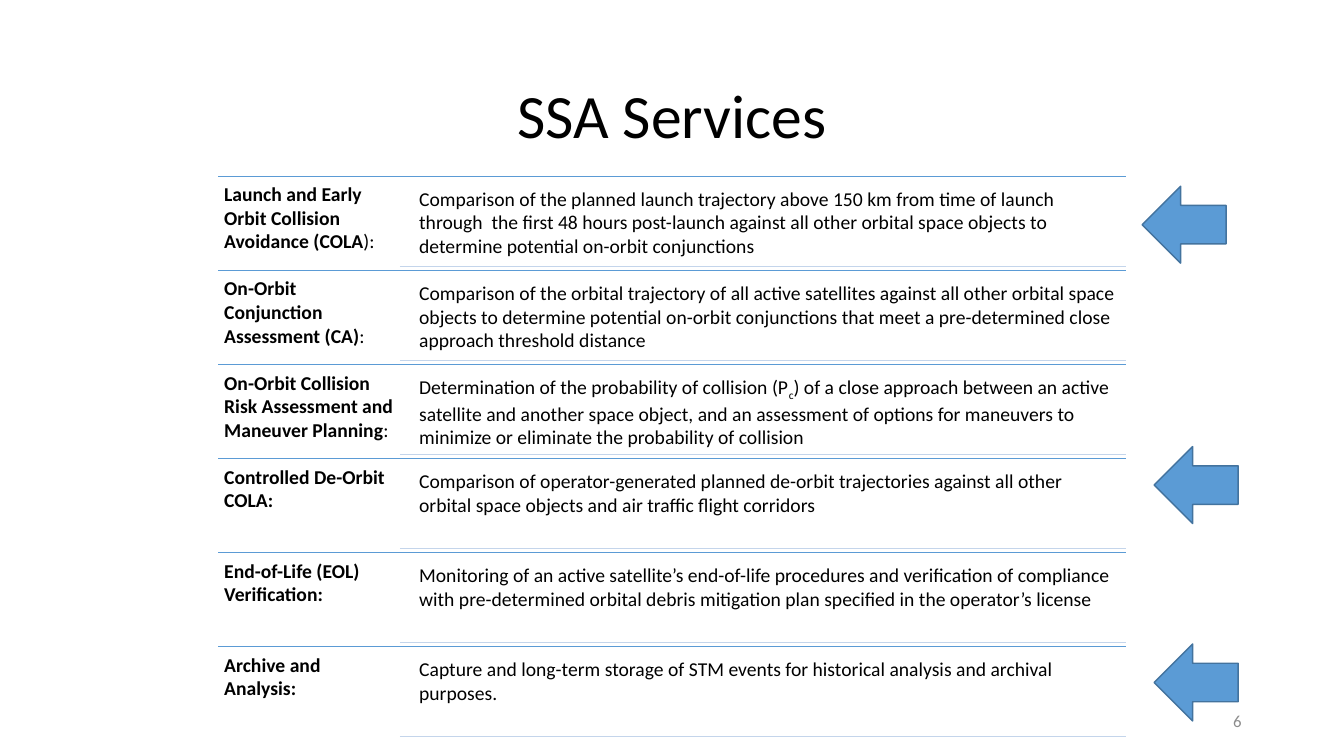
"""Build the SSA Services slide."""
from lxml import etree
from pptx import Presentation
from pptx.dml.color import RGBColor
from pptx.enum.shapes import MSO_CONNECTOR, MSO_SHAPE
from pptx.enum.text import MSO_ANCHOR, PP_ALIGN
from pptx.oxml.ns import qn
from pptx.util import Pt

STRAIGHT = MSO_CONNECTOR.STRAIGHT
LEFT_ARROW = MSO_SHAPE.LEFT_ARROW
TOP, MIDDLE = MSO_ANCHOR.TOP, MSO_ANCHOR.MIDDLE
LEFT, CENTER, RIGHT = PP_ALIGN.LEFT, PP_ALIGN.CENTER, PP_ALIGN.RIGHT

TITLE = "SSA Services"
PAGE_NUMBER = "6"
PLAIN, BOLD, SUBSCRIPT = "plain", "bold", "subscript"
SERVICES = [
    ([("Launch and Early Orbit Collision Avoidance (COLA", BOLD), ("):", PLAIN)],
     [("Comparison of the planned launch trajectory above 150 km from time of launch "
       "through  the first 48 hours post-launch against all other orbital space objects "
       "to determine potential on-orbit conjunctions", PLAIN)]),
    ([("On-Orbit Conjunction Assessment (CA)", BOLD), (":", PLAIN)],
     [("Comparison of the orbital trajectory of all active satellites against all other "
       "orbital space objects to determine potential on-orbit conjunctions that meet a "
       "pre-determined close approach threshold distance", PLAIN)]),
    ([("On-Orbit Collision Risk Assessment and Maneuver Planning", BOLD), (":", PLAIN)],
     [("Determination of the probability of collision (P", PLAIN), ("c", SUBSCRIPT),
      (") of a close approach between an active satellite and another space object, and "
       "an assessment of options for maneuvers to minimize or eliminate the probability "
       "of collision", PLAIN)]),
    ([("Controlled De-Orbit COLA:", BOLD)],
     [("Comparison of operator-generated planned de-orbit trajectories against all other "
       "orbital space objects and air traffic flight corridors", PLAIN)]),
    ([("End-of-Life (EOL) Verification:", BOLD)],
     [("Monitoring of an active satellite’s end-of-life procedures and verification of "
       "compliance with pre-determined orbital debris mitigation plan specified in the "
       "operator’s license", PLAIN)]),
    ([("Archive and Analysis:", BOLD)],
     [("Capture and long-term storage of STM events for historical analysis and archival "
       "purposes.", PLAIN)]),
]
ARROWS = [(815.8, 133), (824.4, 319), (824.4, 460)]
ARROW_SIZE = (60, 55)

FONT = "Calibri"
BLACK, GRAY = "000000", "8C8C8C"
BLUE, PALE_BLUE, DARK_BLUE = "5B9BD5", "C4D5EB", "43739E"

LIST_LEFT, LIST_RIGHT, LIST_TOP = 156, 804, 126
ROW_HEIGHT = 67.2
LABEL_WIDTH = 129.6
DETAIL_LEFT = 295.2
DETAIL_DROP, DETAIL_HEIGHT = 3.3, 61
ROW_INSET = 4.2


def color(hex_code):
    return RGBColor.from_string(hex_code)


def add_text(page, frame, spans, size, hex_code=BLACK, align=LEFT, anchor=TOP,
             inset=(7.2, 3.6)):
    left, top, width, height = frame
    box = page.shapes.add_textbox(Pt(left), Pt(top), Pt(width), Pt(height))
    text = box.text_frame
    text.word_wrap = True
    text.vertical_anchor = anchor
    text.margin_left = text.margin_right = Pt(inset[0])
    text.margin_top = text.margin_bottom = Pt(inset[1])
    para = text.paragraphs[0]
    para.alignment = align
    for words, style in spans:
        span = para.add_run()
        span.text = words
        span.font.name = FONT
        span.font.size = Pt(size)
        span.font.color.rgb = color(hex_code)
        span.font.bold = style == BOLD
        if style == SUBSCRIPT:
            span._r.get_or_add_rPr().set("baseline", "-25000")


def add_rule(page, left, top, hex_code):
    rule = page.shapes.add_connector(STRAIGHT, Pt(left), Pt(top), Pt(LIST_RIGHT), Pt(top))
    rule.line.color.rgb = color(hex_code)
    rule.line.width = Pt(1)
    etree.SubElement(rule._element.spPr, qn("a:effectLst"))


def add_service(page, top, label, detail):
    inset = (ROW_INSET, ROW_INSET)
    detail_top = top + DETAIL_DROP
    add_rule(page, LIST_LEFT, top, BLUE)
    add_text(page, (LIST_LEFT, top, LABEL_WIDTH, ROW_HEIGHT), label, 14, inset=inset)
    add_text(page, (DETAIL_LEFT, detail_top, LIST_RIGHT - DETAIL_LEFT, DETAIL_HEIGHT),
             detail, 14, inset=inset)
    add_rule(page, LIST_LEFT + LABEL_WIDTH, detail_top + DETAIL_HEIGHT, PALE_BLUE)


def add_arrow(page, left, top):
    width, height = ARROW_SIZE
    arrow = page.shapes.add_shape(LEFT_ARROW, Pt(left), Pt(top), Pt(width), Pt(height))
    arrow.shadow.inherit = False
    arrow.fill.solid()
    arrow.fill.fore_color.rgb = color(BLUE)
    arrow.line.color.rgb = color(DARK_BLUE)
    arrow.line.width = Pt(1)


def main():
    deck = Presentation()
    deck.slide_width, deck.slide_height = Pt(960), Pt(540)
    page = deck.slides.add_slide(deck.slide_layouts[6])
    add_text(page, (66, 28.8, 828, 104.4), [(TITLE, PLAIN)], 44,
             align=CENTER, anchor=MIDDLE)
    for row, (label, detail) in enumerate(SERVICES):
        add_service(page, LIST_TOP + row * ROW_HEIGHT, label, detail)
    add_text(page, (678, 500.5, 216, 28.8), [(PAGE_NUMBER, PLAIN)], 12, GRAY,
             align=RIGHT, anchor=MIDDLE)
    for left, top in ARROWS:
        add_arrow(page, left, top)
    deck.save("out.pptx")


if __name__ == "__main__":
    main()
